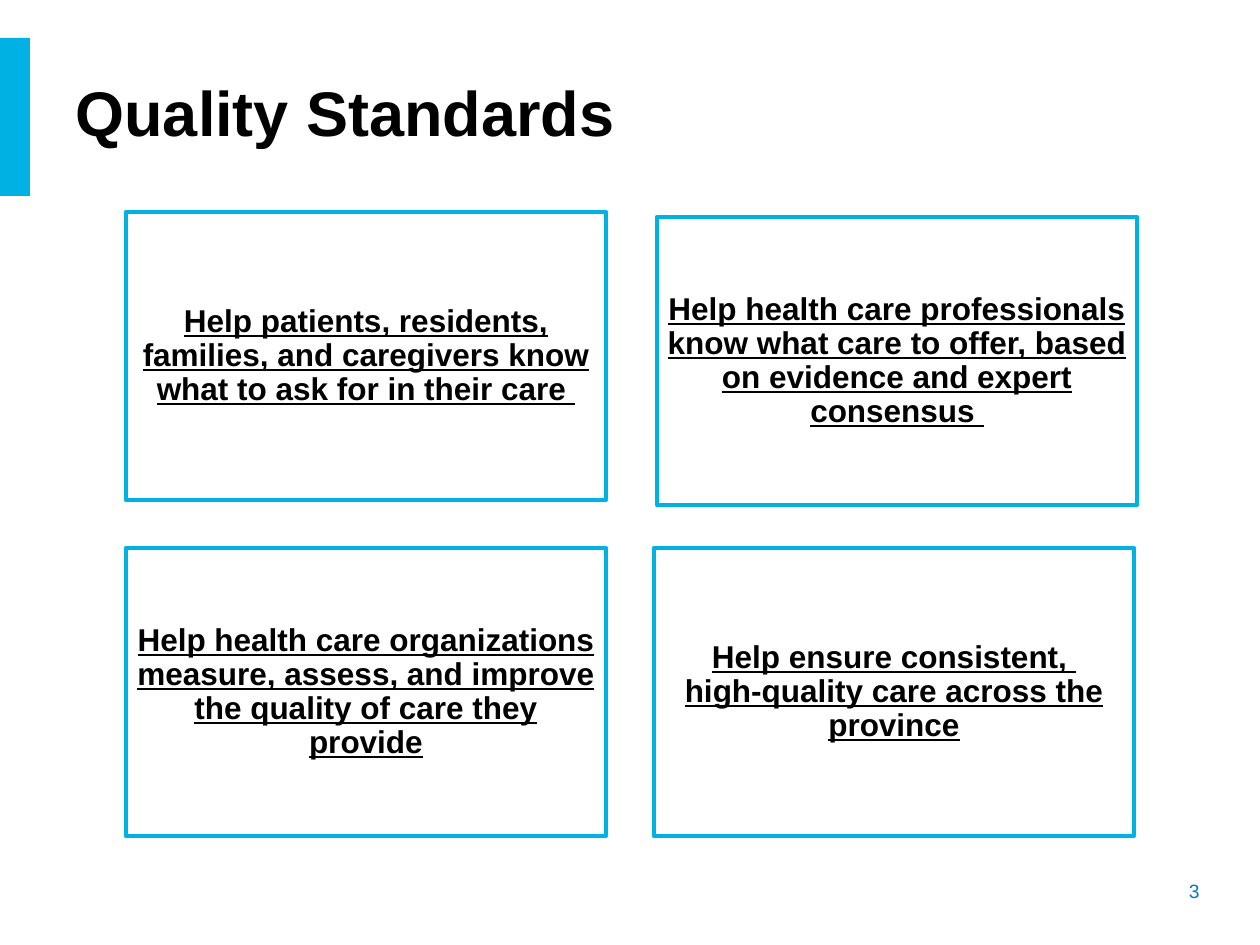
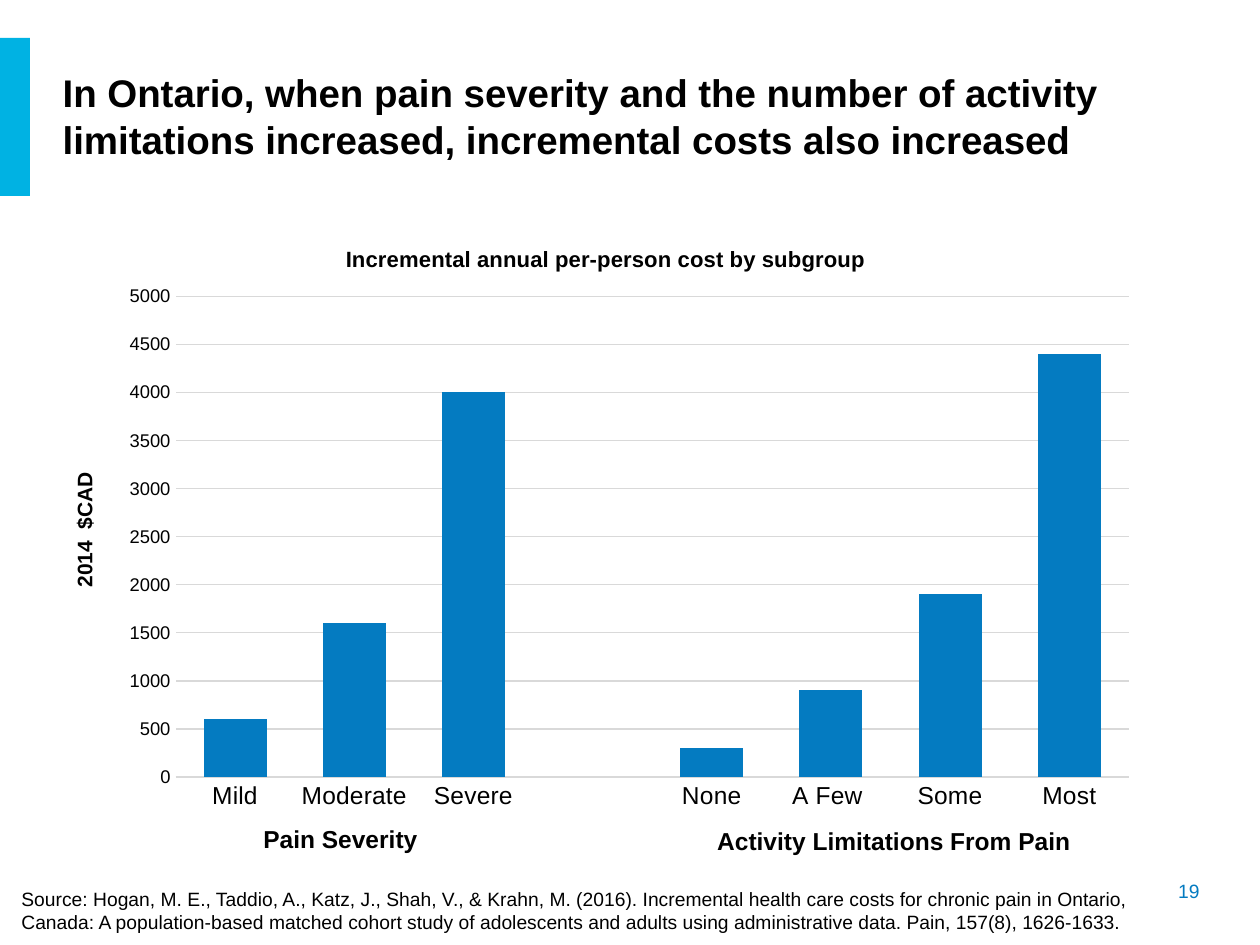
from lxml import etree
from pptx import Presentation
from pptx.chart.data import CategoryChartData
from pptx.dml.color import RGBColor
from pptx.enum.chart import XL_CHART_TYPE as CT, XL_TICK_MARK as TICK
from pptx.enum.shapes import MSO_SHAPE as SHAPE
from pptx.enum.text import MSO_ANCHOR as ANCHOR, PP_ALIGN as ALIGN
from pptx.oxml.ns import qn
from pptx.util import Pt

PX = 914400 / 126
FONT = "Arial"
COLORS = {k: RGBColor.from_string(v) for k, v in {
    "cyan": "00B2E3", "blue": "047BC1", "black": "000000", "grid": "D9D9D9",
}.items()}


def write(tf, text, align=ALIGN.LEFT, color="black", **fmt):
    tf.word_wrap = True
    p = tf.paragraphs[0]
    p.text = text
    p.alignment = align
    for r in p.runs:
        r.font.name = FONT
        r.font.color.rgb = COLORS[color]
        for key, value in fmt.items():
            setattr(r.font, key, value)
    return p


def place(el, index, **fractions):
    for old in el.findall(qn("c:layout")):
        el.remove(old)
    layout = etree.Element(qn("c:layout"))
    manual = etree.SubElement(layout, qn("c:manualLayout"))
    modes = {"xMode": "edge", "yMode": "edge"}
    if "w" in fractions:
        modes = {"layoutTarget": "inner", **modes}
    for key, value in {**modes, **fractions}.items():
        etree.SubElement(manual, qn("c:" + key)).set("val", str(value))
    el.insert(index, layout)


prs = Presentation()
prs.slide_width, prs.slide_height = int(1260 * PX), int(945 * PX)

slides = []
for title, size, box, number in [
    ("Quality Standards", 36, (63, 63, 984, 97), "3"),
    ("In Ontario, when pain severity and the number of activity limitations "
     "increased, incremental costs also increased", 22, (50, 35, 1178, 161), "19"),
]:
    s = prs.slides.add_slide(prs.slide_layouts[5])
    slides.append(s)
    band = s.shapes.add_shape(SHAPE.RECTANGLE, *[int(v * PX) for v in (0, 38, 30, 158)])
    band.shadow.inherit = False
    band.fill.solid()
    band.fill.fore_color.rgb = COLORS["cyan"]
    band.line.fill.background()
    sp = s.shapes.title
    sp.left, sp.top, sp.width, sp.height = [int(v * PX) for v in box]
    sp.text_frame.vertical_anchor = ANCHOR.MIDDLE
    write(sp.text_frame, title, size=Pt(size), bold=True)
    sp = s.shapes.add_textbox(*[int(v * PX) for v in (1065, 873, 147, 37)])
    write(sp.text_frame, number, ALIGN.RIGHT, "blue", size=Pt(11))

standards, costs = slides

for x, y, text in [
    (126, 212, "Help patients, residents, families, and caregivers know what to ask for in their care "),
    (657, 217, "Help health care professionals know what care to offer, based on evidence and expert consensus "),
    (126, 548, "Help health care organizations measure, assess, and improve the quality of care they provide"),
    (654, 548, "Help ensure consistent, \vhigh-quality care across the province"),
]:
    sp = standards.shapes.add_shape(SHAPE.RECTANGLE, *[int(v * PX) for v in (x, y, 480, 288)])
    sp.shadow.inherit = False
    sp.fill.background()
    sp.line.color.rgb = COLORS["cyan"]
    sp.line.width = Pt(2.5)
    tf = sp.text_frame
    tf.vertical_anchor = ANCHOR.MIDDLE
    for side in ("left", "top", "right", "bottom"):
        setattr(tf, "margin_" + side, int(9 * PX))
    p = write(tf, text, ALIGN.CENTER, size=Pt(18), bold=True, underline=True)
    p.line_spacing = 0.9

data = CategoryChartData()
data.categories = ["Mild", "Moderate", "Severe", "", "None", "A Few ", "Some", "Most"]
data.add_series("Series 1", [600, 1600, 4000, None, 300, 900, 1900, 4400])
frame = costs.shapes.add_chart(CT.COLUMN_CLUSTERED, *[int(v * PX) for v in (50, 217, 1101, 605)], data)
chart = frame.chart
chart.has_legend = False
chart.font.name = FONT
chart.font.size = Pt(10.5)
chart.font.color.rgb = COLORS["black"]

plot = chart.plots[0]
plot.gap_width, plot.overlap, plot.vary_by_categories = 89, -27, False
bars = plot.series[0].format.fill
bars.solid()
bars.fore_color.rgb = COLORS["blue"]

cat, val = chart.category_axis, chart.value_axis
for axis, size in ((cat, 14), (val, 10.5)):
    axis.major_tick_mark = axis.minor_tick_mark = TICK.NONE
    axis.tick_labels.font.size = Pt(size)
    axis.tick_labels.font.name = FONT
    axis.tick_labels.font.color.rgb = COLORS["black"]
val.minimum_scale, val.maximum_scale, val.major_unit = 0, 5000, 500
val.format.line.fill.background()
for line in (cat.format.line, val.major_gridlines.format.line):
    line.color.rgb = COLORS["grid"]
    line.width = Pt(0.75)

for title, text, size, x, y in [
    (chart.chart_title, "Incremental annual per-person cost by subgroup", 12.6, 0.265, 0.04),
    (val.axis_title, "2014  $CAD", 12, 0.016, 0.415),
]:
    write(title.text_frame, text, ALIGN.CENTER, size=Pt(size), bold=True)
    place(title._element, 1, x=x, y=y)
place(chart._chartSpace.find(".//" + qn("c:plotArea")), 0, x=0.114, y=0.131, w=0.866, h=0.795)

for box, text, align, size, bold in [
    ((9, 881, 1191, 59),
     "Source: Hogan, M. E., Taddio, A., Katz, J., Shah, V., & Krahn, M. (2016). Incremental health "
     "care costs for chronic pain in Ontario, Canada: A population-based matched cohort study of "
     "adolescents and adults using administrative data. Pain, 157(8), 1626-1633.",
     ALIGN.LEFT, 11, False),
    ((248, 818, 185, 43), "Pain Severity", ALIGN.CENTER, 14, True),
    ((692, 820, 404, 43), "Activity Limitations From Pain", ALIGN.CENTER, 14, True),
]:
    sp = costs.shapes.add_textbox(*[int(v * PX) for v in box])
    write(sp.text_frame, text, align, size=Pt(size), bold=bold)

prs.save("out.pptx")
